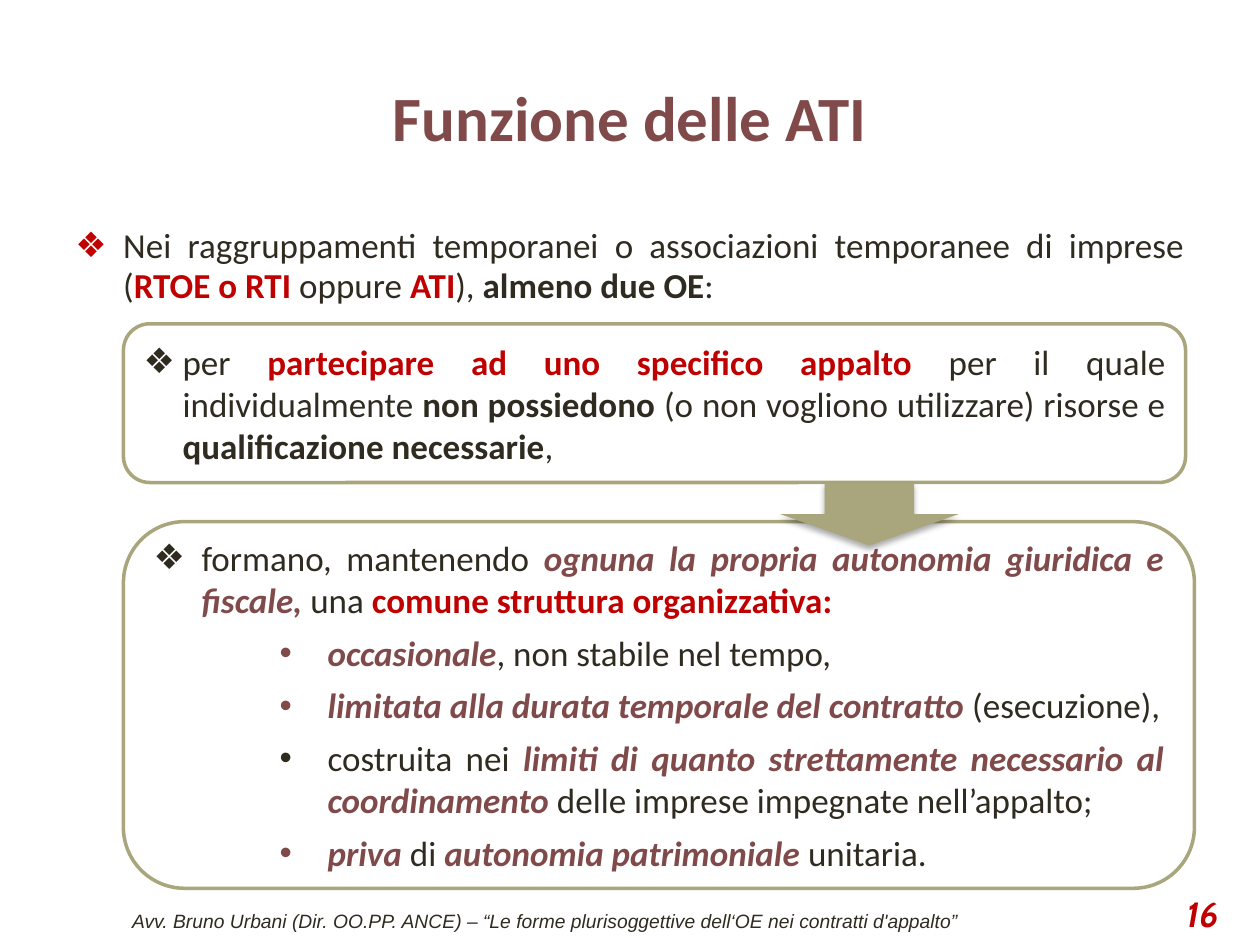
from dataclasses import dataclass

import pptx
import pptx.dml.color
import pptx.enum.shapes
import pptx.enum.text
import pptx.oxml
import pptx.oxml.ns
import pptx.util
from lxml import etree

Inches = pptx.util.Inches
Pt = pptx.util.Pt
RGBColor = pptx.dml.color.RGBColor
Shape = pptx.enum.shapes.MSO_SHAPE
Align = pptx.enum.text.PP_ALIGN
Anchor = pptx.enum.text.MSO_ANCHOR
qn = pptx.oxml.ns.qn

INK = RGBColor(0x2F, 0x2B, 0x20)
RED = RGBColor(0xC0, 0x00, 0x00)
PLUM = RGBColor(0x80, 0x4A, 0x4B)
OLIVE = RGBColor(0xA9, 0xA5, 0x7C)
WHITE = RGBColor(0xFF, 0xFF, 0xFF)


@dataclass(frozen=True)
class Span:
    text: str
    color: RGBColor = INK
    bold: bool = False
    italic: bool = False


@dataclass(frozen=True)
class Para:
    spans: tuple[Span, ...]
    align: Align = Align.JUSTIFY
    size: float = 20
    font: str = "Calibri"
    bullet: str = ""
    bullet_color: RGBColor | None = None
    margin: float = 0
    hanging: float = 0.38
    level: int = 0
    before: float = 0
    line_spacing: float = 1.0


@dataclass(frozen=True)
class Area:
    left: float
    top: float
    width: float
    height: float

    def lengths(self) -> tuple[pptx.util.Length, ...]:
        return tuple(map(Inches, (self.left, self.top, self.width, self.height)))


def strong(text: str) -> Span:
    return Span(text, bold=True)


def red(text: str) -> Span:
    return Span(text, RED, bold=True)


def plum(text: str) -> Span:
    return Span(text, PLUM, bold=True, italic=True)


def bulleted(para: Para, properties: etree._Element) -> None:
    properties.set("marL", str(Inches(para.margin)))
    properties.set("indent", str(-Inches(para.hanging)))
    if para.bullet_color is not None:
        color = etree.SubElement(properties, qn("a:buClr"))
        etree.SubElement(color, qn("a:srgbClr"), val=str(para.bullet_color))
    etree.SubElement(properties, qn("a:buFont"), typeface="Arial")
    etree.SubElement(properties, qn("a:buChar"), char=para.bullet)


def write(shape, paras: list[Para], anchor: Anchor) -> None:
    frame = shape.text_frame
    frame.word_wrap = True
    frame.vertical_anchor = anchor
    for index, para in enumerate(paras):
        paragraph = frame.add_paragraph() if index else frame.paragraphs[0]
        paragraph.alignment = para.align
        paragraph.level = para.level
        paragraph.line_spacing = para.line_spacing
        if index:
            paragraph.space_before = Pt(para.before)
        if para.bullet:
            bulleted(para, paragraph._p.get_or_add_pPr())
        paragraph.font.name = para.font
        paragraph.font.size = Pt(para.size)
        for span in para.spans:
            run = paragraph.add_run()
            run.text = span.text
            run.font.color.rgb = span.color
            run.font.bold = span.bold
            run.font.italic = span.italic


def add_text(page, area: Area, para: Para, anchor: Anchor = Anchor.TOP) -> None:
    write(page.shapes.add_textbox(*area.lengths()), [para], anchor)


def add_panel(page, area: Area, paras: list[Para]) -> None:
    panel = page.shapes.add_shape(Shape.ROUNDED_RECTANGLE, *area.lengths())
    panel.shadow.inherit = False
    panel.fill.solid()
    panel.fill.fore_color.rgb = WHITE
    panel.line.color.rgb = OLIVE
    panel.line.width = Pt(2)
    write(panel, paras, Anchor.MIDDLE)


def add_arrow(page, area: Area) -> None:
    arrow = page.shapes.add_shape(Shape.DOWN_ARROW, *area.lengths())
    arrow.shadow.inherit = False
    arrow.fill.solid()
    arrow.fill.fore_color.rgb = OLIVE
    arrow.line.fill.background()
    effects = arrow._element.spPr.find(qn("a:effectLst"))
    shadow = etree.SubElement(
        effects, qn("a:outerShdw"), blurRad=str(Pt(3.5)), dist=str(Pt(2.2)),
        dir="5400000", algn="ctr", rotWithShape="0",
    )
    color = etree.SubElement(shadow, qn("a:srgbClr"), val="000000")
    etree.SubElement(color, qn("a:alpha"), val="32000")


def feature(*spans: Span) -> Para:
    return Para(spans, bullet="•", margin=1.38, level=2, before=6)


def main() -> None:
    deck = pptx.Presentation()
    deck.slide_width, deck.slide_height = Inches(10), Inches(7.5)
    page = deck.slides.add_slide(deck.slide_layouts[6])

    footer = "Avv. Bruno Urbani (Dir. OO.PP. ANCE) – “Le forme plurisoggettive dell‘OE nei contratti d'appalto”"
    add_text(page, Area(0.51, 7.17, 7.64, 0.29),
             Para((Span(footer, italic=True),), Align.CENTER, 11, "Arial"))
    add_text(page, Area(7.44, 7.05, 2.33, 0.4),
             Para((Span("16", RED, True, True),), Align.RIGHT, 20, "Cabin"), Anchor.MIDDLE)
    add_text(page, Area(0.5, 0.3, 9, 1.25),
             Para((Span("Funzione delle ATI", PLUM, True),), Align.CENTER, 36), Anchor.MIDDLE)

    introduction = (
        Span("Nei raggruppamenti temporanei o associazioni temporanee di imprese ("),
        red("RTOE o RTI "), Span("oppure "), red("ATI"), Span("), "),
        strong("almeno due OE"), Span(":"),
    )
    add_text(page, Area(0.5, 1.75, 9, 5.23),
             Para(introduction, bullet="❖", bullet_color=RED, margin=0.38, line_spacing=0.95))

    purpose = (
        Span("per "), red("partecipare ad uno specifico appalto "),
        Span("per il quale individualmente "), strong("non possiedono "),
        Span("(o non vogliono utilizzare) risorse e "),
        strong("qualificazione necessarie"), Span(","),
    )
    add_panel(page, Area(0.98, 2.57, 8.43, 1.26),
              [Para(purpose, bullet="❖", margin=0.31, hanging=0.31, level=1)])

    structure = (
        Span("formano, mantenendo "), plum("ognuna la propria autonomia giuridica e fiscale, "),
        Span("una "), red("comune struttura organizzativa:"),
    )
    add_panel(page, Area(0.98, 4.14, 8.5, 2.91), [
        Para(structure, bullet="❖", margin=0.38),
        feature(plum("occasionale"), Span(", non stabile nel tempo,")),
        feature(plum("limitata alla durata temporale del contratto "), Span("(esecuzione),")),
        feature(Span("costruita nei "),
                plum("limiti di quanto strettamente necessario al coordinamento "),
                Span("delle imprese impegnate nell’appalto;")),
        feature(plum("priva"), Span(" di "), plum("autonomia patrimoniale "), Span("unitaria.")),
    ])
    add_arrow(page, Area(6.19, 3.83, 1.42, 0.5))

    deck.save("out.pptx")


if __name__ == "__main__":
    main()
